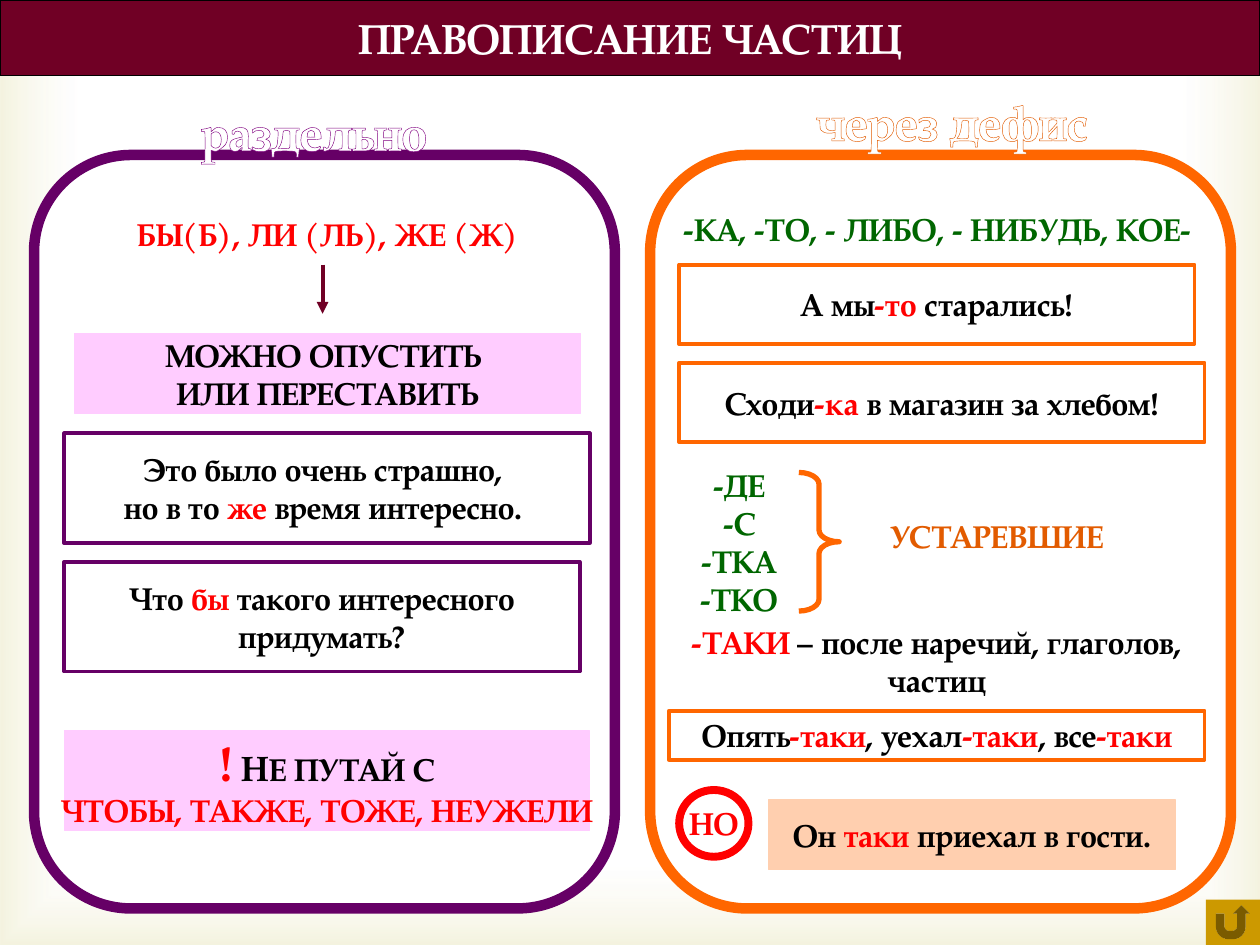
from dataclasses import dataclass

from lxml import etree
from pptx import Presentation
from pptx.dml.color import RGBColor
from pptx.enum.shapes import MSO_CONNECTOR, MSO_SHAPE as SHAPE
from pptx.enum.text import MSO_ANCHOR, PP_ALIGN
from pptx.oxml import parse_xml
from pptx.oxml.ns import nsdecls, qn
from pptx.util import Inches, Pt


@dataclass(frozen=True)
class Theme:
    font: str = "TeX Gyre Pagella"
    white: str = "FFFFFF"
    black: str = "000000"
    wine: str = "700025"
    purple: str = "660066"
    violet: str = "800080"
    orange: str = "FF6600"
    rust: str = "E25B00"
    green: str = "006600"
    red: str = "FF0000"
    pink: str = "FFCCFF"
    peach: str = "FFCFAF"
    gold: str = "CC9900"
    olive: str = "D1CA75"
    body: int = 18
    lead: int = 20
    title: int = 24
    heading: int = 28


T = Theme()


def rgb(value):
    return RGBColor.from_string(value)


def write(shape, lines, color=T.black, size=T.body, outline=None, anchor=MSO_ANCHOR.MIDDLE):
    """Each line is a string whose |marked| parts are red, or a list of (text, color, size)."""
    tf = shape.text_frame
    tf.word_wrap = False
    tf.vertical_anchor = anchor
    for i, line in enumerate(lines):
        p = tf.paragraphs[0] if i == 0 else tf.add_paragraph()
        p.alignment = PP_ALIGN.CENTER
        if isinstance(line, str):
            line = [(part, T.red if k % 2 else color, size)
                    for k, part in enumerate(line.split("|")) if part]
        for text, ink, points in line:
            r = p.add_run()
            r.text = text
            r.font.name, r.font.size, r.font.bold = T.font, Pt(points), True
            r.font.color.rgb = rgb(ink)
            if outline:
                r.font._element.insert(0, parse_xml(
                    f'<a:ln {nsdecls("a")} w="{Pt(2.5)}"><a:solidFill>'
                    f'<a:srgbClr val="{outline}"/></a:solidFill></a:ln>'))


def add_box(s, x, y, w, h, lines=(), kind=SHAPE.RECTANGLE, fill=T.white, line=None,
            width=0.75, **fmt):
    sp = s.shapes.add_shape(kind, Inches(x), Inches(y), Inches(w), Inches(h))
    sp.shadow.inherit = False
    if fill:
        sp.fill.solid()
        sp.fill.fore_color.rgb = rgb(fill)
    else:
        sp.fill.background()
    if line:
        sp.line.color.rgb = rgb(line)
        sp.line.width = Pt(width)
    else:
        sp.line.fill.background()
    write(sp, lines, **fmt)
    return sp


def add_plain(s, x, y, w, h, lines, fill=T.white, **fmt):
    return add_box(s, x, y, w, h, lines, fill=fill, line=fill, **fmt)


def add_arrow(s, x, y, length):
    c = s.shapes.add_connector(MSO_CONNECTOR.STRAIGHT, Inches(x), Inches(y),
                               Inches(x), Inches(y + length))
    c.line.color.rgb = rgb(T.wine)
    c.line.width = Pt(2.25)
    etree.SubElement(c.line._get_or_add_ln(), qn("a:tailEnd"), type="triangle")
    etree.SubElement(c._element.spPr, qn("a:effectLst"))


def add_backdrop(s, x, y, w, h):
    sp = add_box(s, x, y, w, h, fill=None)
    stops = "".join(
        f'<a:gs pos="{pos * 1000}"><a:srgbClr val="{color}">'
        f'<a:alpha val="{alpha * 1000}"/></a:srgbClr></a:gs>'
        for pos, color, alpha in ((0, T.white, 11), (83, T.white, 11), (100, T.olive, 23)))
    old = sp._element.spPr.find(qn("a:noFill"))
    old.getparent().replace(old, parse_xml(
        f'<a:gradFill {nsdecls("a")} rotWithShape="1"><a:gsLst>{stops}</a:gsLst>'
        '<a:path path="rect"><a:fillToRect l="50000" t="50000" r="50000" b="50000"/>'
        '</a:path></a:gradFill>'))


def add_frame(s, x, y, w, h, color):
    sp = add_box(s, x, y, w, h, kind=SHAPE.ROUNDED_RECTANGLE, line=color, width=6)
    sp.adjustments[0] = 0.167


def add_heading(s, x, y, w, text, outline):
    tb = s.shapes.add_textbox(Inches(x), Inches(y), Inches(w), Inches(0.46))
    write(tb, [text], color=T.white, size=T.heading, outline=outline, anchor=MSO_ANCHOR.TOP)


def separate_panel(s, x, y, w, h):
    add_frame(s, x, y, w, h, T.purple)
    add_heading(s, x + 1.19, y - 0.47, 2.06, "раздельно", T.violet)

    # Particles and the rule they lead to
    add_plain(s, x + 0.56, y + 0.39, 3.54, 0.47, ["БЫ(Б), ЛИ (ЛЬ), ЖЕ (Ж)"], color=T.red)
    add_arrow(s, x + 2.29, y + 0.87, 0.39)
    add_plain(s, x + 0.32, y + 1.42, 4.02, 0.63,
              ["МОЖНО ОПУСТИТЬ ", "ИЛИ ПЕРЕСТАВИТЬ"], fill=T.pink)

    # Examples
    examples = (
        (2.21, 4.17, ["Это было очень страшно, ", "но в то |же| время интересно. "]),
        (3.23, 4.09, ["Что |бы| такого интересного", "придумать?"]),
    )
    for dy, width, lines in examples:
        add_box(s, x + 0.24, y + dy, width, 0.87, lines, line=T.purple, width=2.25)

    # Warning
    add_plain(s, x + 0.24, y + 4.57, 4.17, 0.79, [
        [("!", T.red, T.heading), (" Н", T.black, T.lead), ("Е ПУТАЙ С", T.black, T.body)],
        "|ЧТОБЫ, ТАКЖЕ, ТОЖЕ, НЕУЖЕЛИ|"], fill=T.pink)


def hyphen_panel(s, x, y, w, h):
    add_frame(s, x, y, w, h, T.orange)
    add_heading(s, x + 1.18, y - 0.55, 2.43, "через дефис", T.rust)

    # Particles
    add_plain(s, x + 0.31, y + 0.39, 3.94, 0.39,
              ["-КА, -ТО, - ЛИБО, - НИБУДЬ, КОЕ-"], color=T.green)

    # Obsolete particles
    add_plain(s, x + 0.23, y + 2.44, 0.95, 1.26, ["-ДЕ", "-С", "-ТКА", "-ТКО"], color=T.green)
    brace = add_box(s, x + 1.18, y + 2.52, 0.32, 1.1, kind=SHAPE.RIGHT_BRACE,
                    fill=None, line=T.orange, width=3)
    brace.adjustments[0] = 0.291
    add_plain(s, x + 1.65, y + 2.83, 2.2, 0.39, ["УСТАРЕВШИЕ"], color=T.rust)

    # The particle "таки"
    add_plain(s, x + 0.15, y + 3.7, 4.25, 0.63,
              ["|-ТАКИ| – после наречий, глаголов,", "частиц"])

    # Examples
    examples = (
        (0.23, 0.87, 4.09, 0.63, "А мы|-то| старались!"),
        (0.23, 1.65, 4.17, 0.63, "Сходи|-ка| в магазин за хлебом!"),
        (0.15, 4.41, 4.25, 0.39, "Опять|-таки|, уехал|-таки|, все|-таки|"),
    )
    for dx, dy, width, height, text in examples:
        add_box(s, x + dx, y + dy, width, height, [text], line=T.orange, width=2.25)

    # Exception
    add_box(s, x + 0.23, y + 5.04, 0.55, 0.53, ["НО"], kind=SHAPE.OVAL,
            line=T.red, width=4.5, color=T.red)
    add_plain(s, x + 0.94, y + 5.12, 3.23, 0.55, ["Он |таки| приехал в гости."], fill=T.peach)


def main():
    prs = Presentation()
    prs.slide_width, prs.slide_height = Inches(10), Inches(7.5)
    s = prs.slides.add_slide(prs.slide_layouts[6])

    add_backdrop(s, 0, 0, 10, 7.5)
    add_box(s, 0, 0, 10, 0.6, ["ПРАВОПИСАНИЕ ЧАСТИЦ"], fill=T.wine, line=T.black,
            color=T.white, size=T.title)
    separate_panel(s, 0.27, 1.23, 4.61, 5.98)
    hyphen_panel(s, 5.16, 1.23, 4.61, 5.98)

    # Return button
    add_box(s, 9.57, 7.14, 0.43, 0.36, kind=SHAPE.ACTION_BUTTON_RETURN, fill=T.gold)

    prs.save("out.pptx")


if __name__ == "__main__":
    main()
